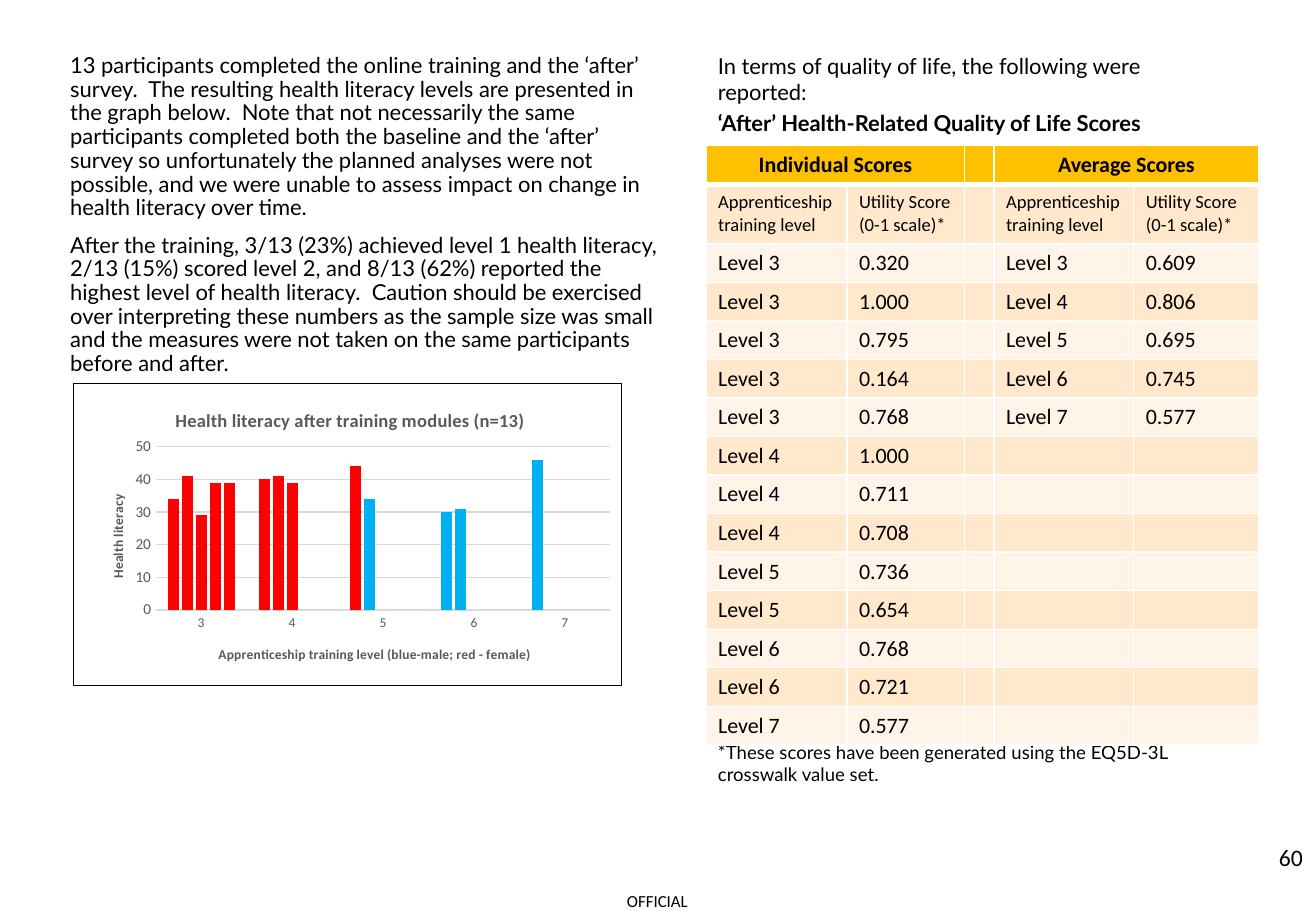
import lxml.etree
import pptx
import pptx.chart.data
import pptx.dml.color
import pptx.enum.chart
import pptx.enum.text
import pptx.oxml
import pptx.oxml.ns
import pptx.util

Inches = pptx.util.Inches
Pt = pptx.util.Pt
RGBColor = pptx.dml.color.RGBColor
Align = pptx.enum.text.PP_ALIGN
Anchor = pptx.enum.text.MSO_ANCHOR
qn = pptx.oxml.ns.qn

BLACK = RGBColor(0x00, 0x00, 0x00)
GREY = RGBColor(0x59, 0x59, 0x59)
GRID = RGBColor(0xD9, 0xD9, 0xD9)
FEMALE = RGBColor(0xFF, 0x00, 0x00)
MALE = RGBColor(0x00, 0xB0, 0xF0)
HEADER = RGBColor(0xFF, 0xC0, 0x00)
BANDS = RGBColor(0xFF, 0xF4, 0xE7), RGBColor(0xFF, 0xE8, 0xCC)

FINDINGS = [
    "13 participants completed the online training and the ‘after’ survey.  The resulting health "
    "literacy levels are presented in the graph below.  Note that not necessarily the same "
    "participants completed both the baseline and the ‘after’ survey so unfortunately the planned "
    "analyses were not possible, and we were unable to assess impact on change in health literacy "
    "over time.",
    "After the training, 3/13 (23%) achieved level 1 health literacy, 2/13 (15%) scored level 2, "
    "and 8/13 (62%) reported the highest level of health literacy.  Caution should be exercised "
    "over interpreting these numbers as the sample size was small and the measures were not taken "
    "on the same participants before and after.",
]
LITERACY = {"3": [34, 41, 29, 39, 39], "4": [40, 41, 39], "5": [44, 34], "6": [30, 31], "7": [46]}
MALE_BARS = {("5", 1), ("6", 0), ("6", 1), ("7", 0)}
INDIVIDUAL = [
    (3, "0.320"), (3, "1.000"), (3, "0.795"), (3, "0.164"), (3, "0.768"),
    (4, "1.000"), (4, "0.711"), (4, "0.708"), (5, "0.736"), (5, "0.654"),
    (6, "0.768"), (6, "0.721"), (7, "0.577"),
]
AVERAGE = [(3, "0.609"), (4, "0.806"), (5, "0.695"), (6, "0.745"), (7, "0.577")]


def set_font(font, size, name="Calibri", color=BLACK, bold=False):
    font.size, font.name, font.bold = Pt(size), name, bold
    font.color.rgb = color


def add_text(slide, box, paragraphs, size, name="Calibri", anchor=Anchor.TOP):
    frame = slide.shapes.add_textbox(*map(Inches, box)).text_frame
    frame.word_wrap = True
    frame.vertical_anchor = anchor
    frame.text = "\n".join(paragraphs)
    for paragraph in frame.paragraphs:
        set_font(paragraph.font, size, name)
    return frame


def add_findings(slide, box):
    frame = add_text(slide, box, FINDINGS, 13, "Lato")
    for paragraph in frame.paragraphs:
        paragraph.line_spacing = 0.9
    frame.paragraphs[1].space_before = Pt(8)


def add_layout(parent, index, inner=False, **fractions):
    for old in parent.findall(qn("c:layout")):
        parent.remove(old)
    layout = lxml.etree.Element(qn("c:layout"))
    manual = lxml.etree.SubElement(layout, qn("c:manualLayout"))
    if inner:
        lxml.etree.SubElement(manual, qn("c:layoutTarget")).set("val", "inner")
    for side in "xy":
        lxml.etree.SubElement(manual, qn(f"c:{side}Mode")).set("val", "edge")
    for side, fraction in fractions.items():
        lxml.etree.SubElement(manual, qn(f"c:{side}")).set("val", str(fraction))
    parent.insert(index, layout)


def set_title(owner, text, size, x, y):
    title = owner.chart_title if hasattr(owner, "chart_title") else owner.axis_title
    title.text_frame.text = text
    set_font(title.text_frame.paragraphs[0].font, size, color=GREY, bold=True)
    add_layout(title._element, 1, x=x, y=y)


def add_literacy_chart(slide, box):
    data = pptx.chart.data.CategoryChartData()
    data.categories = list(LITERACY)
    for bar in range(max(map(len, LITERACY.values()))):
        data.add_series(f"Series {bar + 1}",
                        [scores[bar] if bar < len(scores) else None for scores in LITERACY.values()])
    chart = slide.shapes.add_chart(
        pptx.enum.chart.XL_CHART_TYPE.COLUMN_CLUSTERED, *map(Inches, box), data).chart
    set_font(chart.font, 10)
    chart.has_legend = False
    set_title(chart, "Health literacy after training modules (n=13)", 11, 0.18, 0.07)

    plot = chart.plots[0]
    plot.gap_width, plot.overlap, plot.vary_by_categories = 219, -27, False
    for bar, series in enumerate(plot.series):
        series.format.fill.solid()
        series.format.fill.fore_color.rgb = FEMALE
        series.invert_if_negative = False
        for index, level in enumerate(LITERACY):
            if (level, bar) in MALE_BARS:
                fill = series.points[index].format.fill
                fill.solid()
                fill.fore_color.rgb = MALE

    levels, scores = chart.category_axis, chart.value_axis
    for axis, size in (levels, 8), (scores, 9):
        set_font(axis.tick_labels.font, size, color=GREY)
        axis.major_tick_mark = axis.minor_tick_mark = pptx.enum.chart.XL_TICK_MARK.NONE
    set_title(levels, "Apprenticeship training level (blue-male; red - female)", 8, 0.26, 0.86)
    set_title(scores, "Health literacy", 8, 0.06, 0.36)
    scores.minimum_scale, scores.maximum_scale, scores.major_unit = 0, 50, 10
    scores.format.line.fill.background()
    for line in levels.format.line, scores.major_gridlines.format.line:
        line.color.rgb = GRID
        line.width = Pt(0.75)

    space = chart._chartSpace
    add_layout(space.chart.plotArea, 0, inner=True, x=0.15, y=0.21, w=0.83, h=0.54)
    space.chart.addnext(pptx.oxml.parse_xml(
        f'<c:spPr {pptx.oxml.ns.nsdecls("c", "a")}><a:noFill/><a:ln w="{Pt(0.75)}">'
        f'<a:solidFill><a:srgbClr val="{BLACK}"/></a:solidFill></a:ln></c:spPr>'))


def add_quality_intro(slide, box):
    frame = add_text(slide, box, [
        "In terms of quality of life, the following were reported:",
        "‘After’ Health-Related Quality of Life Scores"], 13, "Lato", Anchor.MIDDLE)
    heading = frame.paragraphs[1]
    heading.font.bold = True
    heading.space_before = Pt(3)


def style_cell(cell, row, text):
    properties = cell._tc.get_or_add_tcPr()
    widths = {"L": 1, "R": 1, "T": 3 if row == 1 else 1, "B": 3 if row == 0 else 1}
    for side, width in widths.items():
        properties.append(pptx.oxml.parse_xml(
            f'<a:ln{side} {pptx.oxml.ns.nsdecls("a")} w="{Pt(width)}">'
            f'<a:solidFill><a:srgbClr val="FFFFFF"/></a:solidFill></a:ln{side}>'))
    cell.fill.solid()
    cell.fill.fore_color.rgb = BANDS[row % 2] if row else HEADER
    cell.text = text
    size = 11 if row == 1 else 13
    for paragraph in cell.text_frame.paragraphs:
        set_font(paragraph.font, size, bold=row == 0)
        if row == 0:
            paragraph.alignment = Align.CENTER
        if not text:
            lxml.etree.SubElement(paragraph._p, qn("a:endParaRPr")).set("sz", str(size * 100))


def add_scores_table(slide, box):
    headings = ["Apprenticeship training level", "Utility Score\n(0-1 scale)*"]
    rows = [["Individual Scores", "", "", "Average Scores", ""], headings + [""] + headings]
    for index, (level, score) in enumerate(INDIVIDUAL):
        average = ["", ""]
        if index < len(AVERAGE):
            average = [f"Level {AVERAGE[index][0]}", AVERAGE[index][1]]
        rows.append([f"Level {level}", score, ""] + average)
    widths = [1.16, 0.97, 0.24, 1.15, 1.03]
    table = slide.shapes.add_table(len(rows), len(widths), *map(Inches, box)).table
    table.first_row = table.horz_banding = False
    for column, width in zip(table.columns, widths):
        column.width = Inches(width)
    for row, texts in enumerate(rows):
        table.rows[row].height = Inches(0.49 if row == 1 else 0.3)
        for column, text in enumerate(texts):
            style_cell(table.cell(row, column), row, text)
    for column in 0, 3:
        table.cell(0, column).merge(table.cell(0, column + 1))


def add_footer(slide):
    marking = add_text(slide, (5.16, 7.33, 0.53, 0.17), ["OFFICIAL"], 10)
    marking.word_wrap = False
    marking.margin_left = marking.margin_right = marking.margin_top = marking.margin_bottom = 0
    number = add_text(slide, (8.38, 6.86, 2.44, 0.4), ["60"], 14, anchor=Anchor.MIDDLE)
    number.paragraphs[0].alignment = Align.RIGHT


def main():
    deck = pptx.Presentation()
    deck.slide_width, deck.slide_height = Inches(10.83), Inches(7.5)
    slide = deck.slides.add_slide(deck.slide_layouts[6])
    add_footer(slide)
    add_text(slide, (5.81, 6.05, 4.54, 0.47),
             ["*These scores have been generated using the EQ5D-3L crosswalk value set."], 11, "Lato")
    add_scores_table(slide, (5.81, 1.2, 4.55, 4.69))
    add_quality_intro(slide, (5.81, 0.38, 4.33, 0.79))
    add_literacy_chart(slide, (0.6, 3.15, 4.52, 2.5))
    add_findings(slide, (0.48, 0.4, 5.07, 2.92))
    deck.save("out.pptx")


if __name__ == "__main__":
    main()
